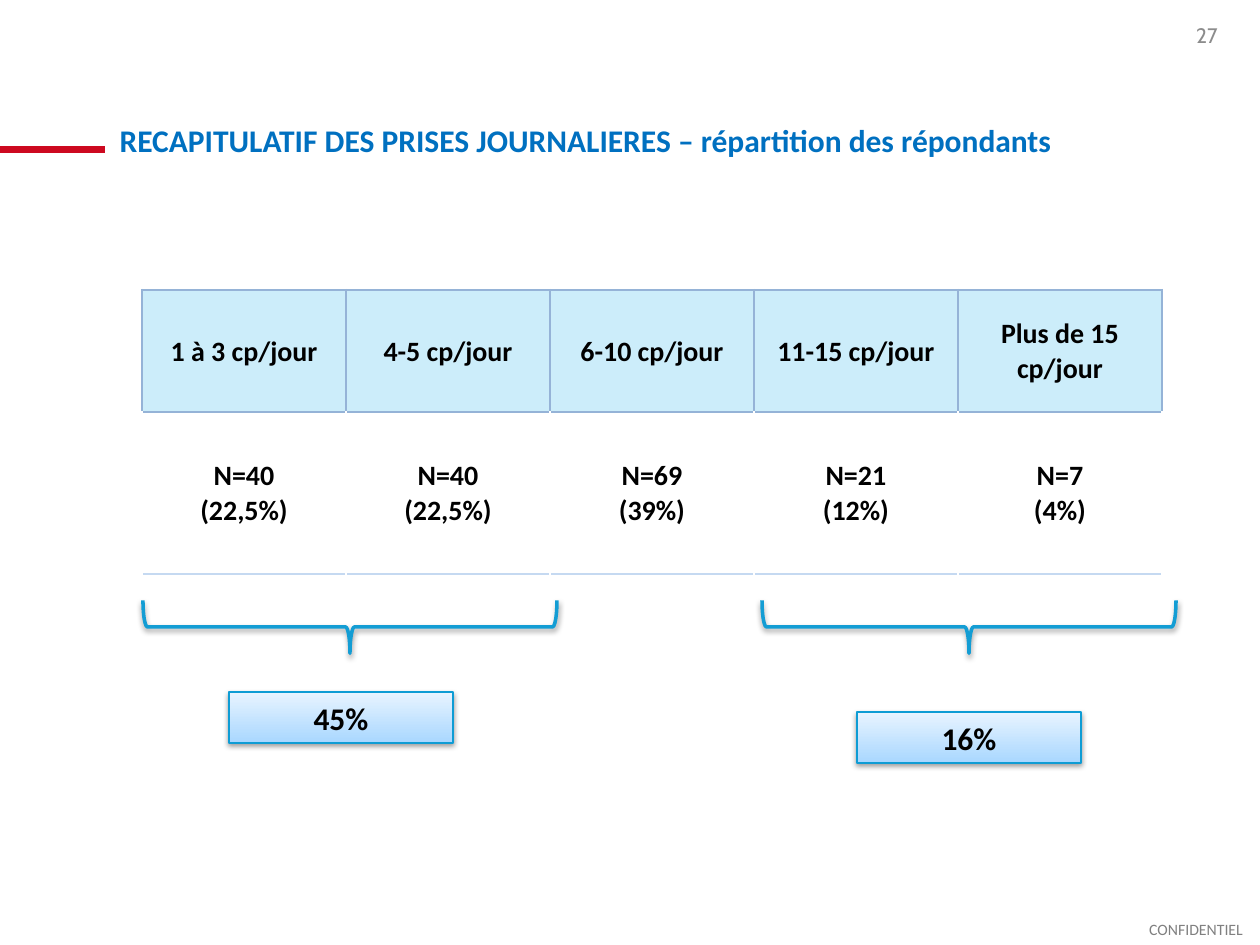
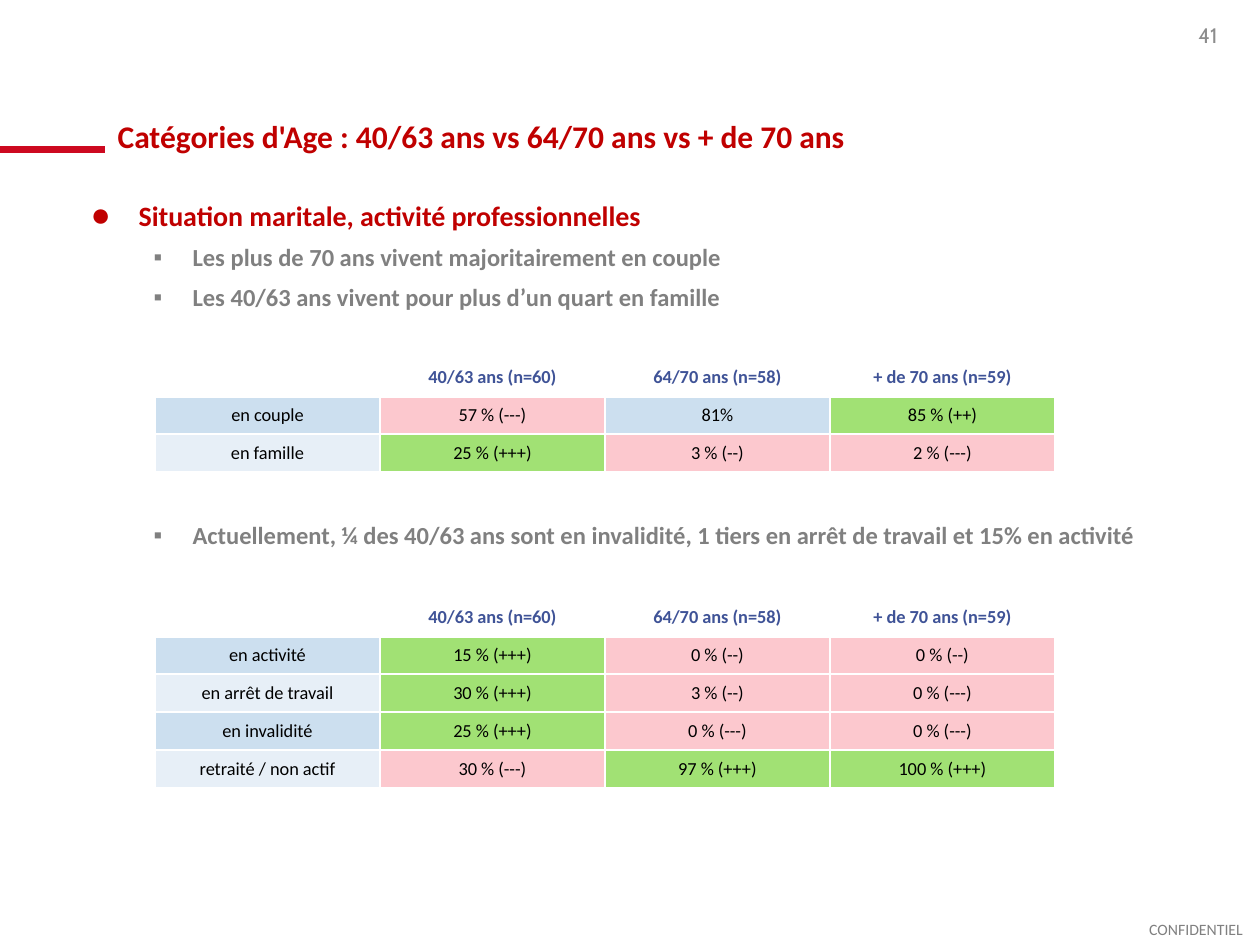
from lxml.etree import SubElement
from pptx import Presentation
from pptx.dml.color import RGBColor
from pptx.enum.shapes import MSO_CONNECTOR, MSO_SHAPE
from pptx.enum.text import MSO_ANCHOR as Anchor, MSO_AUTO_SIZE as AutoSize, PP_ALIGN as Align
from pptx.oxml.ns import qn
from pptx.util import Emu, Pt

# Colours
RED_RULE = RGBColor(0xCD, 0x09, 0x20)
RED = RGBColor(0xC0, 0x00, 0x00)
BLUE = RGBColor(0x00, 0x70, 0xC0)
NAVY = RGBColor(0x3F, 0x53, 0x97)
BLACK = RGBColor(0x00, 0x00, 0x00)
WHITE = RGBColor(0xFF, 0xFF, 0xFF)
GREY = RGBColor(0x80, 0x80, 0x80)
NUMBER_GREY = RGBColor(0x8C, 0x8C, 0x8C)
DOSE_FILL = RGBColor(0xCC, 0xED, 0xFA)
DOSE_BORDER = RGBColor(0x95, 0xB3, 0xD7)
DOSE_BOTTOM = RGBColor(0xC5, 0xD9, 0xF1)
BRACE_LINE = RGBColor(0x13, 0x9D, 0xD4)
BOX_LINE = RGBColor(0x0E, 0x9C, 0xD4)
BOX_GRADIENT = (RGBColor(0xA9, 0xD7, 0xFF), RGBColor(0xE8, 0xF4, 0xFF))
BANDS = (RGBColor(0xCC, 0xDF, 0xEF), RGBColor(0xE7, 0xEF, 0xF7))
HIGHER = RGBColor(0xA1, 0xE1, 0x74)
LOWER = RGBColor(0xFC, 0xC8, 0xCE)

# Text formats
TITLE_BLUE = {"name": "Calibri", "size": Pt(18), "bold": True, "color": BLUE}
TITLE_RED = {**TITLE_BLUE, "color": RED}
SHARE_FORMAT = {**TITLE_BLUE, "color": BLACK}
DOSE_FORMAT = {**SHARE_FORMAT, "size": Pt(16)}
AGE_HEADER = {"name": "Calibri", "size": Pt(10.5), "bold": True, "color": NAVY}
AGE_VALUE = {**AGE_HEADER, "bold": False, "color": BLACK}
FOOTER_FORMAT = {"name": "Calibri", "size": Pt(9), "color": GREY}
NUMBER_FORMAT = {"name": "Cabin", "size": Pt(12), "color": NUMBER_GREY}

# Bullet levels: indent and hanging are px
BULLET_LEVELS = [
    {"indent": 48, "hanging": 48, "mark": "●", "mark_size": 120,
     "format": {**TITLE_RED, "size": Pt(16)}},
    {"indent": 102, "hanging": 39, "mark": "▪", "mark_size": 100,
     "format": {**TITLE_RED, "size": Pt(14), "color": GREY}},
]

# Content: daily doses
DOSE_TITLE = "RECAPITULATIF DES PRISES JOURNALIERES – répartition des répondants"
DOSE_ROWS = [
    ["1 à 3 cp/jour", "4-5 cp/jour", "6-10 cp/jour", "11-15 cp/jour", "Plus de 15 cp/jour"],
    ["N=40\n(22,5%)", "N=40\n(22,5%)", "N=69\n(39%)", "N=21\n(12%)", "N=7\n(4%)"],
]
# Brace centre, then text and place of the share box
SHARES = [(350, "45%", 229, 692), (969, "16%", 857, 712)]

# Content: age groups
AGE_TITLE = "Catégories d'Age : 40/63 ans vs 64/70 ans vs + de 70 ans"
# Level, space before in points, text
AGE_POINTS = [
    (0, 0, "Situation maritale, activité professionnelles"),
    (1, 6, "Les plus de 70 ans vivent majoritairement en couple"),
    (1, 6, "Les 40/63 ans vivent pour plus d’un quart en famille"),
    (1, 119, "Actuellement, ¼ des 40/63 ans sont en invalidité, "
             "1 tiers en arrêt de travail et 15% en activité"),
]
AGE_GROUPS = ["", "40/63 ans (n=60)", "64/70 ans (n=58)", "+ de 70 ans (n=59)"]
COUPLE_ROWS = [
    ["en couple", "57 % (---)", "81%", "85 % (++)"],
    ["en famille", "25 % (+++)", "3 % (--)", "2 % (---)"],
]
ACTIVITY_ROWS = [
    ["en activité", "15 % (+++)", "0 % (--)", "0 % (--)"],
    ["en arrêt de travail", "30 % (+++)", "3 % (--)", "0 % (---)"],
    ["en invalidité", "25 % (+++)", "0 % (---)", "0 % (---)"],
    ["retraité / non actif", "30 % (---)", "97 % (+++)", "100 % (+++)"],
]


def px(length):
    return Emu(round(length * 914400 / 126))


def place(*lengths):
    return [px(length) for length in lengths]


def format_font(font, values):
    for name, value in values.items():
        if name == "color":
            font.color.rgb = value
        else:
            setattr(font, name, value)


def write(frame, text, values, align):
    """Fill a text frame, one paragraph for each line."""
    frame.text = text
    for paragraph in frame.paragraphs:
        paragraph.alignment = align
        for run in paragraph.runs:
            format_font(run.font, values)
        if not text:
            SubElement(paragraph._p, qn("a:endParaRPr"), sz=str(int(values["size"].pt * 100)))


def add_label(slide, box, text, values, align, wrap=True):
    frame = slide.shapes.add_textbox(*place(*box)).text_frame
    frame.word_wrap = wrap
    frame.vertical_anchor = Anchor.MIDDLE
    write(frame, text, values, align)


def add_slide(presentation, layout, number, title, box, values, anchor):
    """Add a slide with its title, red rule, number and footer."""
    slide = presentation.slides.add_slide(presentation.slide_layouts[layout])
    shape = slide.shapes.title
    shape.left, shape.top, shape.width, shape.height = place(*box)
    frame = shape.text_frame
    frame.auto_size = AutoSize.NONE
    frame.vertical_anchor = anchor
    write(frame, title, values, Align.LEFT)

    rule = slide.shapes.add_connector(MSO_CONNECTOR.STRAIGHT, *place(105, 150, 0, 150))
    rule.line.color.rgb = RED_RULE
    rule.line.width = Pt(4)
    SubElement(rule._element.spPr, qn("a:effectLst"))
    add_label(slide, (936, 10, 294, 50), number, NUMBER_FORMAT, Align.RIGHT)
    add_label(slide, (1136, 914, 120, 31), "CONFIDENTIEL", FOOTER_FORMAT, Align.CENTER, False)
    return slide


def set_borders(cell, borders):
    """Borders map a side (L, R, T, B) to colour and width in points."""
    properties = cell._tc.get_or_add_tcPr()
    sides = [side for side in "LRTB" if side in borders]
    for index, side in enumerate(sides):
        color, width = borders[side]
        line = SubElement(properties, qn(f"a:ln{side}"), w=str(Pt(width)))
        fill = SubElement(line, qn("a:solidFill"))
        SubElement(fill, qn("a:srgbClr"), val=str(color))
        properties.insert(index, line)


def add_table(slide, left, top, column_width, row_heights, rows, style):
    """Add a table; style(row, column, text) gives format, fill and borders."""
    columns = len(rows[0])
    size = (column_width * columns, sum(row_heights))
    table = slide.shapes.add_table(len(rows), columns, *place(left, top, *size)).table
    table.first_row = table.horz_banding = False
    for column in table.columns:
        column.width = px(column_width)
    for row_index, texts in enumerate(rows):
        table.rows[row_index].height = px(row_heights[row_index])
        for column_index, text in enumerate(texts):
            cell = table.cell(row_index, column_index)
            values, fill, borders = style(row_index, column_index, text)
            cell.margin_left = cell.margin_right = cell.margin_top = px(1)
            cell.margin_bottom = 0
            cell.vertical_anchor = Anchor.MIDDLE
            write(cell.text_frame, text, values, Align.CENTER)
            if fill is None:
                cell.fill.background()
            else:
                cell.fill.solid()
                cell.fill.fore_color.rgb = fill
            set_borders(cell, borders)


def dose_style(row, column, text):
    border = (DOSE_BORDER, 1.5)
    if row == 0:
        return DOSE_FORMAT, DOSE_FILL, dict.fromkeys("LRTB", border)
    return DOSE_FORMAT, None, {"T": border, "B": (DOSE_BOTTOM, 1.5)}


def age_style(row, column, text):
    borders = dict.fromkeys("LRTB", (WHITE, 1))
    if row == 0:
        return AGE_HEADER, None, {**borders, "B": (WHITE, 3)}
    if row == 1:
        borders["T"] = (WHITE, 3)
    fill = HIGHER if "(+" in text else LOWER if "(-" in text else BANDS[(row - 1) % 2]
    return AGE_VALUE, fill, borders


def add_soft_shadow(shape):
    shape.shadow.inherit = False
    effects = shape._element.spPr.find(qn("a:effectLst"))
    shadow = SubElement(effects, qn("a:outerShdw"), blurRad="40000", dist="20000",
                        dir="5400000", rotWithShape="0")
    color = SubElement(shadow, qn("a:srgbClr"), val=str(BLACK))
    SubElement(color, qn("a:alpha"), val="38000")


def add_brace(slide, center):
    width, height, middle = 53, 414, 627
    box = place(center - width / 2, middle - height / 2, width, height)
    brace = slide.shapes.add_shape(MSO_SHAPE.RIGHT_BRACE, *box)
    brace.rotation = 90
    brace.fill.background()
    brace.line.color.rgb = BRACE_LINE
    brace.line.width = Pt(2)
    add_soft_shadow(brace)


def add_share_box(slide, text, left, top):
    box = slide.shapes.add_shape(MSO_SHAPE.RECTANGLE, *place(left, top, 224, 51))
    box.fill.gradient()
    box.fill.gradient_angle = 90
    for position, (stop, color) in enumerate(zip(box.fill.gradient_stops, BOX_GRADIENT)):
        stop.position = position
        stop.color.rgb = color
    box.line.color.rgb = BOX_LINE
    box.line.width = Pt(0.75)
    add_soft_shadow(box)
    write(box.text_frame, text, SHARE_FORMAT, Align.CENTER)


def fill_bullets(body, points):
    body.left, body.top, body.width, body.height = place(78, 192, 1123, 663)
    frame = body.text_frame
    frame.auto_size = AutoSize.NONE
    frame.text = "\n".join(text for _, _, text in points)
    for paragraph, (level, space, _) in zip(frame.paragraphs, points):
        look = BULLET_LEVELS[level]
        paragraph.level = level
        paragraph.alignment = Align.JUSTIFY
        paragraph.space_before = Pt(space)
        properties = paragraph._p.get_or_add_pPr()
        properties.set("marL", str(px(look["indent"])))
        properties.set("indent", str(-px(look["hanging"])))
        color = SubElement(properties, qn("a:buClr"))
        SubElement(color, qn("a:srgbClr"), val=str(look["format"]["color"]))
        SubElement(properties, qn("a:buSzPct"), val=str(look["mark_size"] * 1000))
        SubElement(properties, qn("a:buChar"), char=look["mark"])
        format_font(paragraph.runs[0].font, look["format"])


def main():
    presentation = Presentation()
    presentation.slide_width, presentation.slide_height = place(1260, 945)

    # Daily doses: table, braces and cumulated shares
    slide = add_slide(presentation, 5, "27", DOSE_TITLE, (107, 115, 1115, 50),
                      TITLE_BLUE, Anchor.TOP)
    add_table(slide, 142, 290, 204, [122, 162], DOSE_ROWS, dose_style)
    for center, share, left, top in SHARES:
        add_brace(slide, center)
        add_share_box(slide, share, left, top)

    # Age groups: bullets with two tables
    slide = add_slide(presentation, 1, "41", AGE_TITLE, (105, 60, 1125, 101),
                      TITLE_RED, Anchor.BOTTOM)
    fill_bullets(slide.placeholders[1], AGE_POINTS)
    for top, age_rows in ((358, COUPLE_ROWS), (598, ACTIVITY_ROWS)):
        rows = [AGE_GROUPS, *age_rows]
        add_table(slide, 155, top, 225, [38] * len(rows), rows, age_style)

    presentation.save("out.pptx")


if __name__ == "__main__":
    main()
